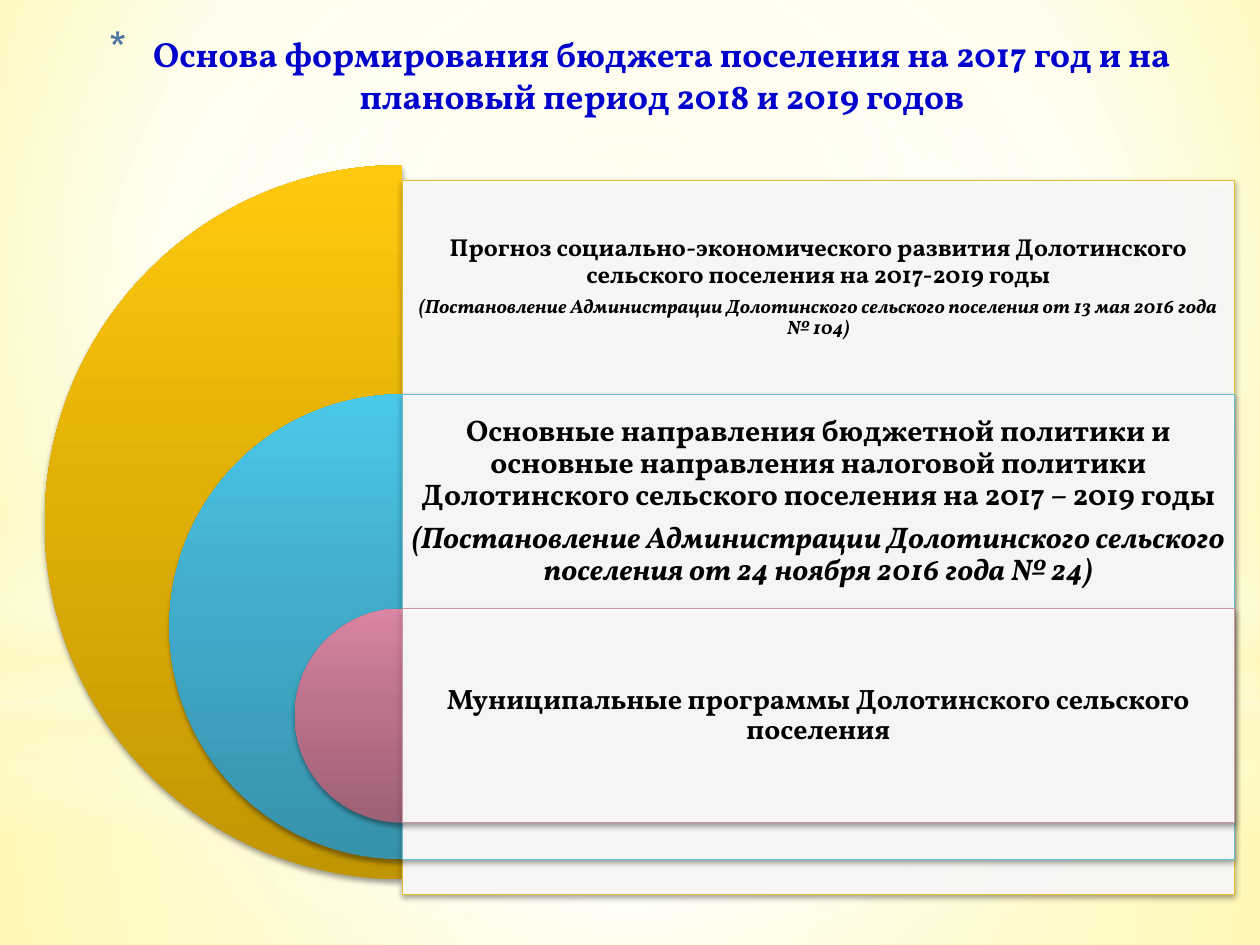
"""Builds a slide on the basis of a settlement budget, with nested half discs."""
from dataclasses import dataclass

from lxml import etree
from pptx import Presentation
from pptx.dml.color import RGBColor
from pptx.enum.shapes import MSO_SHAPE
from pptx.enum.text import MSO_ANCHOR, PP_ALIGN
from pptx.oxml.ns import qn
from pptx.util import Inches, Pt

RECTANGLE = MSO_SHAPE.RECTANGLE
ELLIPSE = MSO_SHAPE.OVAL
PIE = MSO_SHAPE.PIE
CENTER = PP_ALIGN.CENTER
TOP = MSO_ANCHOR.TOP
MIDDLE = MSO_ANCHOR.MIDDLE


@dataclass(frozen=True)
class Theme:
    font: str = "Vollkorn"
    title_size: int = 20
    title_color: str = "0000CC"
    bullet_color: str = "4E75A3"
    text_color: str = "000000"
    panel_color: str = "FFFFFF"
    panel_opacity: int = 90
    shadow_color: str = "000000"
    shadow_opacity: int = 38
    background: tuple = ((0, "FFF9B5"), (60, "FFFFFF"), (100, "FFF46F"))


@dataclass(frozen=True)
class Layer:
    disc_top: float
    diameter: float
    stops: tuple
    outline: str
    inset: float
    paragraphs: tuple


THEME = Theme()
CENTERED = (50, 50, 50, 50)
PANEL_LEFT, PANEL_TOP, PANEL_WIDTH, ROW_HEIGHT = 3.19, 1.43, 6.61, 1.7
TITLE = "Основа формирования бюджета поселения на 2017 год и на плановый период 2018 и 2019 годов"

GLOWS = (
    (RECTANGLE, (0, 5.58, 10, 1.92),
     ((0, "FFFFFF", 91), (37, "FFFFFF", 76), (100, "FEFAC9", 79)), CENTERED),
    (RECTANGLE, (0, 0, 10, 5.58),
     ((0, "FFFFFF", 89), (48, "FFFFFF", 62), (100, "FEFAC9", 79)), CENTERED),
    (RECTANGLE, (0, 4.12, 10, 2.5),
     ((0, "FFFFFF", 0), (29, "FFFFFF", 30), (45, "FEFAC9", 40),
      (55, "FFFFFF", 26), (65, "FEFAC9", 60), (100, "FFFFFF", 0)), None),
    (ELLIPSE, (0, 1.75, 10, 5.58), ((0, "FFFFFF"), (56, "FFFFFF", 0)), CENTERED),
)

LAYERS = (
    Layer(1.31, 5.67, ((0, "C19604"), (55, "E2B005"), (100, "FFC90F")), "E7BC29", 0.06, (
        ("Прогноз социально-экономического развития Долотинского сельского "
         "поселения на 2017-2019 годы", 14, False),
        ("(Постановление Администрации Долотинского сельского поселения "
         "от 13 мая 2016 года № 104)", 11, True))),
    Layer(3.13, 3.69, ((0, "3792AC"), (55, "41ACCA"), (100, "4BC8EB")), "62BED7", 0.07, (
        ("Основные направления бюджетной политики и основные направления налоговой "
         "политики Долотинского сельского поселения на 2017 – 2019 годы", 17, False),
        ("(Постановление Администрации Долотинского сельского поселения "
         "от 24 ноября 2016 года № 24)", 17, True))),
    Layer(4.83, 1.7, ((0, "9F6176"), (55, "BB728B"), (100, "DA85A2")), "D092A7", 0.07, (
        ("Муниципальные программы Долотинского сельского поселения", 16, False),)),
)


def add_element(parent, tag, **attributes):
    """Append a child element with the given attributes."""
    element = etree.SubElement(parent, qn(tag))
    for name, value in attributes.items():
        element.set(name, str(value))
    return element


def add_color(parent, color, opacity=100):
    """Append an RGB colour with its opacity in percent."""
    element = add_element(parent, "a:srgbClr", val=color)
    if opacity < 100:
        add_element(element, "a:alpha", val=opacity * 1000)


def set_gradient(properties, stops, angle=0, center=None):
    """Replace a solid fill by a linear gradient, or a circular one around a center."""
    solid = properties.find(qn("a:solidFill"))
    gradient = etree.Element(qn("a:gradFill"), rotWithShape="1")
    stop_list = add_element(gradient, "a:gsLst")
    for position, *color in stops:
        add_color(add_element(stop_list, "a:gs", pos=position * 1000), *color)
    if center:
        circle = add_element(gradient, "a:path", path="circle")
        edges = {side: value * 1000 for side, value in zip("ltrb", center)}
        add_element(circle, "a:fillToRect", **edges)
    else:
        add_element(gradient, "a:lin", ang=angle * 60000, scaled=0)
    properties.replace(solid, gradient)


def set_background(slide):
    """Fill the slide background with the theme gradient."""
    slide.background.fill.solid()
    properties = slide.element.find(".//" + qn("p:bgPr"))
    set_gradient(properties, THEME.background, center=(20, 10, 20, 60))


def add_plain_shape(slide, kind, box):
    """Add a white shape without outline or shadow."""
    shape = slide.shapes.add_shape(kind, *map(Inches, box))
    shape.shadow.inherit = False
    shape.line.fill.background()
    shape.fill.solid()
    shape.fill.fore_color.rgb = RGBColor.from_string(THEME.panel_color)
    return shape


def add_shadow(shape):
    """Cast a soft shadow below the shape."""
    effects = shape.element.spPr.find(qn("a:effectLst"))
    shadow = add_element(effects, "a:outerShdw", blurRad=Pt(3.1), dist=Pt(2),
                         dir=90 * 60000, rotWithShape=0)
    add_color(shadow, THEME.shadow_color, THEME.shadow_opacity)


def add_text(slide, box, paragraphs, color, anchor, inset=None):
    """Add a text box of bold centred paragraphs."""
    frame = slide.shapes.add_textbox(*map(Inches, box)).text_frame
    frame.word_wrap = True
    frame.vertical_anchor = anchor
    if inset is not None:
        frame.margin_left = frame.margin_right = Inches(inset)
        frame.margin_top = frame.margin_bottom = Inches(inset)
    frame.text = "\n".join(text for text, _, _ in paragraphs)
    for paragraph, (_, size, italic) in zip(frame.paragraphs, paragraphs):
        paragraph.alignment = CENTER
        for run in paragraph.runs:
            run.font.name = THEME.font
            run.font.size = Pt(size)
            run.font.bold = True
            run.font.italic = italic
            run.font.color.rgb = RGBColor.from_string(color)
    return frame


def add_title(slide):
    """Add the title with its asterisk bullet."""
    frame = add_text(slide, (0.33, 0.21, 9.5, 0.87), [(TITLE, THEME.title_size, False)],
                     THEME.title_color, TOP)
    properties = frame.paragraphs[0]._p.get_or_add_pPr()
    properties.set("marL", str(Inches(0.35)))
    properties.set("indent", str(Inches(-0.35)))
    add_color(add_element(properties, "a:buClr"), THEME.bullet_color)
    add_element(properties, "a:buSzPct", val=128000)
    add_element(properties, "a:buChar", char="*")


def add_layer(slide, index, layer):
    """Add a half disc, its panel and the text in the panel's row."""
    diameter = layer.diameter
    disc = add_plain_shape(slide, PIE, (PANEL_LEFT - diameter / 2, layer.disc_top,
                                        diameter, diameter))
    disc.adjustments[0], disc.adjustments[1] = 54, 162
    set_gradient(disc.element.spPr, layer.stops, angle=270)
    add_shadow(disc)

    top = PANEL_TOP + index * ROW_HEIGHT
    panel = add_plain_shape(slide, RECTANGLE, (PANEL_LEFT, top, PANEL_WIDTH, diameter))
    color = panel.element.spPr.find(qn("a:solidFill"))[0]
    add_element(color, "a:alpha", val=THEME.panel_opacity * 1000)
    panel.line.color.rgb = RGBColor.from_string(layer.outline)
    panel.line.width = Pt(0.5)
    add_shadow(panel)

    frame = add_text(slide, (PANEL_LEFT, top, PANEL_WIDTH, ROW_HEIGHT), layer.paragraphs,
                     THEME.text_color, MIDDLE, layer.inset)
    for paragraph, (_, size, _) in zip(frame.paragraphs, layer.paragraphs):
        paragraph.line_spacing = 0.9
        paragraph.space_after = Pt(0.35 * size)


def main():
    """Build and save the presentation."""
    presentation = Presentation()
    presentation.slide_width, presentation.slide_height = Inches(10), Inches(7.5)
    slide = presentation.slides.add_slide(presentation.slide_layouts[6])
    set_background(slide)
    for kind, box, stops, center in GLOWS:
        glow = add_plain_shape(slide, kind, box)
        set_gradient(glow.element.spPr, stops, angle=90, center=center)
    add_title(slide)
    for index, layer in enumerate(LAYERS):
        add_layer(slide, index, layer)
    presentation.save("out.pptx")


if __name__ == "__main__":
    main()
